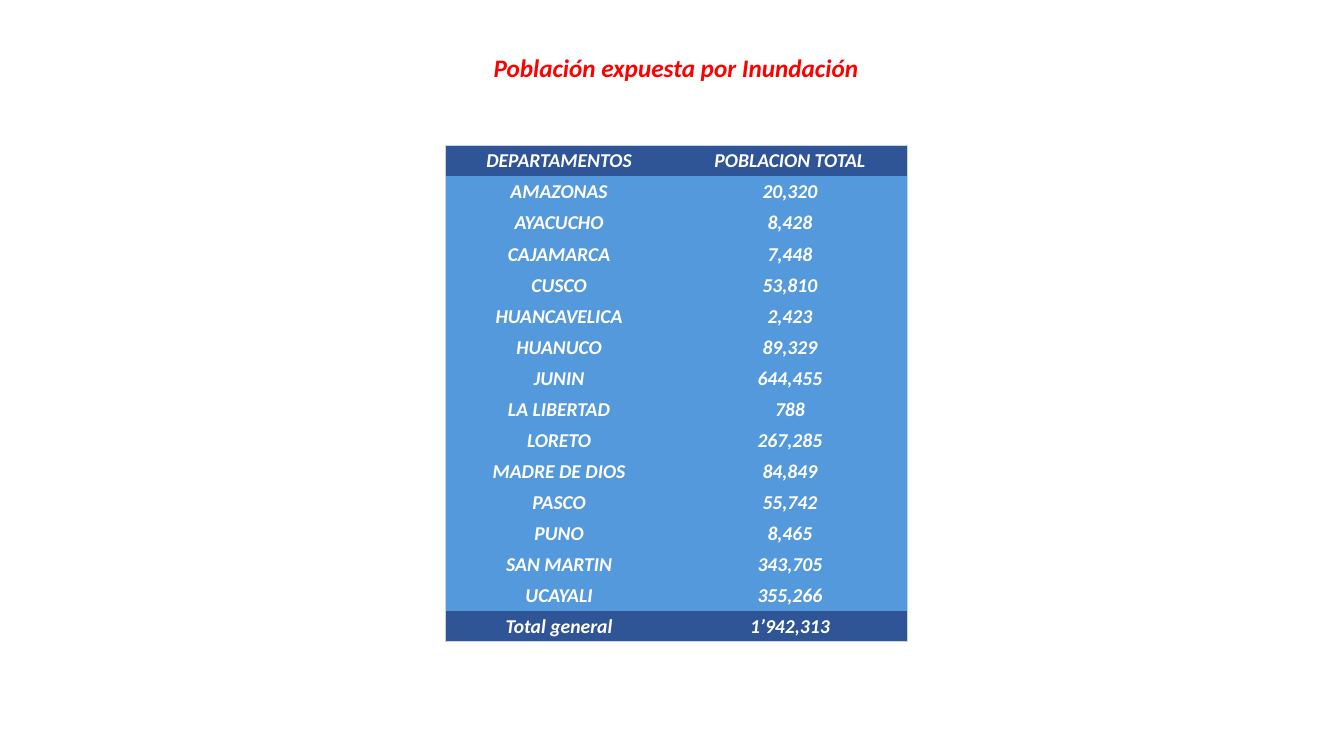
from dataclasses import dataclass

from lxml.etree import SubElement
from pptx import Presentation
from pptx.dml.color import RGBColor as RGB
from pptx.enum.text import MSO_ANCHOR as Anchor, MSO_AUTO_SIZE as AutoSize, PP_ALIGN as Align
from pptx.oxml.ns import qn
from pptx.util import Inches, Pt

# Content
TITLE = "Población expuesta por Inundación"
HEADER = ("DEPARTAMENTOS", "POBLACION TOTAL")
DEPARTMENTS = [
    ("AMAZONAS", "20,320"),
    ("AYACUCHO", "8,428"),
    ("CAJAMARCA", "7,448"),
    ("CUSCO", "53,810"),
    ("HUANCAVELICA", "2,423"),
    ("HUANUCO", "89,329"),
    ("JUNIN", "644,455"),
    ("LA LIBERTAD", "788"),
    ("LORETO", "267,285"),
    ("MADRE DE DIOS", "84,849"),
    ("PASCO", "55,742"),
    ("PUNO", "8,465"),
    ("SAN MARTIN", "343,705"),
    ("UCAYALI", "355,266"),
]
TOTAL = ("Total general", "1’942,313")

# Layout in inches
TITLE_BOX = (4.78, 0.47, 3.85, 0.4)
TABLE_LEFT, TABLE_TOP, TABLE_HEIGHT = 4.42, 1.44, 4.93
COLUMN_WIDTHS = (2.25, 2.33)
CELL_MARGIN = 0.01
PLAIN_TABLE_STYLE = "{2D5ABB26-0587-4C30-8999-92F81FD0307C}"


@dataclass(frozen=True)
class Theme:
    font: str = "Calibri"
    title_size: int = 18
    cell_size: int = 14
    title: str = "FF0000"
    cell_text: str = "FFFFFF"
    band: str = "2F5597"
    body: str = "5499DB"
    border: str = "C4D5EB"
    border_width: float = 0.5


THEME = Theme()


def write(frame, text, *, size, color):
    """Put one centred bold italic paragraph in a text frame."""
    para = frame.paragraphs[0]
    para.alignment = Align.CENTER
    span = para.add_run()
    span.text = text
    font = span.font
    font.name, font.size, font.bold, font.italic = THEME.font, Pt(size), True, True
    font.color.rgb = RGB.from_string(color)


def add_border(cell, side):
    line = SubElement(cell._tc.get_or_add_tcPr(), qn(f"a:ln{side}"), w=str(Pt(THEME.border_width)))
    SubElement(SubElement(line, qn("a:solidFill")), qn("a:srgbClr"), val=THEME.border)


def add_title(page):
    box = page.shapes.title
    box.left, box.top, box.width, box.height = map(Inches, TITLE_BOX)
    frame = box.text_frame
    frame.word_wrap = False
    frame.auto_size = AutoSize.SHAPE_TO_FIT_TEXT
    frame.vertical_anchor = Anchor.TOP
    write(frame, TITLE, size=THEME.title_size, color=THEME.title)


def add_population_table(page):
    rows = [HEADER, *DEPARTMENTS, TOTAL]
    last_row, last_column = len(rows) - 1, len(HEADER) - 1
    table = page.shapes.add_table(
        len(rows), len(HEADER), Inches(TABLE_LEFT), Inches(TABLE_TOP),
        Inches(sum(COLUMN_WIDTHS)), Inches(TABLE_HEIGHT)).table
    table.first_row = table.horz_banding = False
    table._tbl.tblPr.find(qn("a:tableStyleId")).text = PLAIN_TABLE_STYLE
    for column, width in zip(table.columns, COLUMN_WIDTHS):
        column.width = Inches(width)

    for r, row in enumerate(rows):
        for c, text in enumerate(row):
            cell = table.cell(r, c)
            cell.margin_left = cell.margin_right = cell.margin_top = Inches(CELL_MARGIN)
            cell.margin_bottom = 0
            cell.vertical_anchor = Anchor.MIDDLE
            # Only the outer edge of the table is lined
            outer = {"L": c == 0, "R": c == last_column, "T": r == 0, "B": r == last_row}
            for side, lined in outer.items():
                if lined:
                    add_border(cell, side)
            cell.fill.solid()
            fill = THEME.band if r in (0, last_row) else THEME.body
            cell.fill.fore_color.rgb = RGB.from_string(fill)
            write(cell.text_frame, text, size=THEME.cell_size, color=THEME.cell_text)


def main():
    deck = Presentation()
    deck.slide_width, deck.slide_height = Inches(13.33), Inches(7.5)
    page = deck.slides.add_slide(deck.slide_layouts.get_by_name("Title Only"))
    add_title(page)
    add_population_table(page)
    deck.save("out.pptx")


if __name__ == "__main__":
    main()
